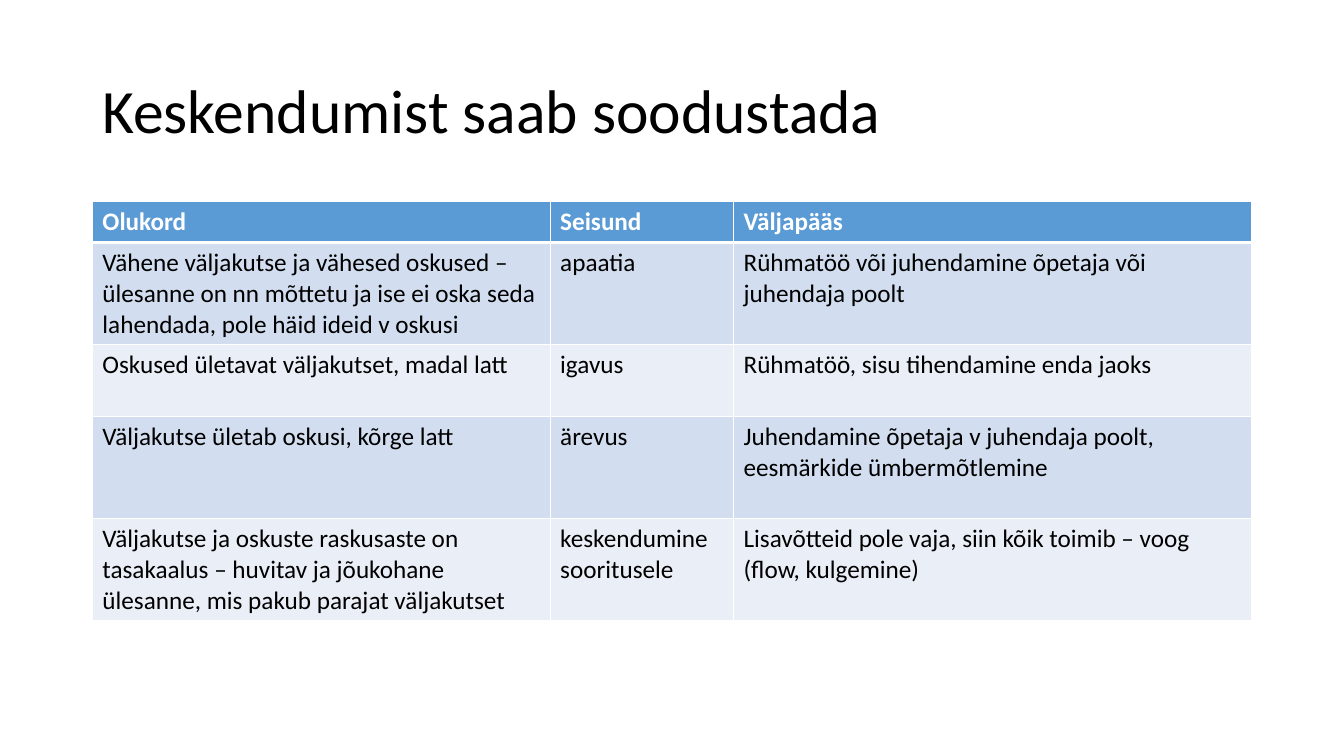
import dataclasses

import pptx
import pptx.dml.color
import pptx.enum.text
import pptx.oxml
import pptx.oxml.ns
import pptx.util

Pt = pptx.util.Pt


@dataclasses.dataclass(frozen=True)
class Theme:
    font: str = "Calibri"
    title_size: float = 44
    table_size: float = 18
    ink: str = "000000"
    paper: str = "FFFFFF"
    header: str = "5B9BD5"
    bands: tuple = ("D2DEEF", "EAEFF7")
    rule: float = 1
    header_rule: float = 3


THEME = Theme()

TITLE = "Keskendumist saab soodustada"
HEADINGS = ("Olukord", "Seisund", "Väljapääs")
SITUATIONS = (
    (
        "Vähene väljakutse ja vähesed oskused – ülesanne on nn mõttetu ja ise ei oska seda "
        "lahendada, pole häid ideid v oskusi",
        "apaatia",
        "Rühmatöö või juhendamine õpetaja või juhendaja poolt",
    ),
    (
        "Oskused ületavat väljakutset, madal latt",
        "igavus",
        "Rühmatöö, sisu tihendamine enda jaoks",
    ),
    (
        "Väljakutse ületab oskusi, kõrge latt",
        "ärevus",
        "Juhendamine õpetaja v juhendaja poolt, eesmärkide ümbermõtlemine",
    ),
    (
        "Väljakutse ja oskuste raskusaste on tasakaalus – huvitav ja jõukohane ülesanne, "
        "mis pakub parajat väljakutset",
        "keskendumine sooritusele",
        "Lisavõtteid pole vaja, siin kõik toimib – voog\n(flow, kulgemine)",
    ),
)
LEFT, WIDTH = 66, 828
COLUMN_WIDTHS = (327, 131, 370)
ROW_HEIGHTS = (29.2, 73, 51.3, 73, 73)


def rgb(code):
    return pptx.dml.color.RGBColor.from_string(code)


def write(frame, text, size, color, bold=False):
    for index, line in enumerate(text.split("\n")):
        paragraph = frame.add_paragraph() if index else frame.paragraphs[0]
        run = paragraph.add_run()
        run.text = line
        run.font.name = THEME.font
        run.font.size = Pt(size)
        run.font.bold = bold
        run.font.color.rgb = rgb(color)


def add_title(slide):
    heading = slide.shapes.add_textbox(Pt(LEFT), Pt(28.75), Pt(WIDTH), Pt(104.4))
    frame = heading.text_frame
    frame.word_wrap = True
    frame.vertical_anchor = pptx.enum.text.MSO_ANCHOR.MIDDLE
    write(frame, TITLE, THEME.title_size, THEME.ink)
    frame.paragraphs[0].line_spacing = 0.9


def set_borders(cell, top, bottom):
    properties = cell._tc.get_or_add_tcPr()
    widths = {"lnL": THEME.rule, "lnR": THEME.rule, "lnT": top, "lnB": bottom}
    for position, (side, width) in enumerate(widths.items()):
        border = pptx.oxml.parse_xml(
            f'<a:{side} {pptx.oxml.ns.nsdecls("a")} w="{Pt(width)}">'
            f'<a:solidFill><a:srgbClr val="{THEME.paper}"/></a:solidFill></a:{side}>'
        )
        properties.insert(position, border)


def fill_row(table, row, texts):
    is_header = row == 0
    background = THEME.header if is_header else THEME.bands[(row - 1) % 2]
    color = THEME.paper if is_header else THEME.ink
    top = THEME.header_rule if row == 1 else THEME.rule
    bottom = THEME.header_rule if is_header else THEME.rule
    for column, text in enumerate(texts):
        cell = table.cell(row, column)
        cell.fill.solid()
        cell.fill.fore_color.rgb = rgb(background)
        set_borders(cell, top, bottom)
        write(cell.text_frame, text, THEME.table_size, color, is_header)


def add_situation_table(slide):
    rows = (HEADINGS, *SITUATIONS)
    table = slide.shapes.add_table(
        len(rows), len(HEADINGS), Pt(LEFT), Pt(144), Pt(WIDTH), Pt(sum(ROW_HEIGHTS))
    ).table
    table.horz_banding = False
    for column, width in zip(table.columns, COLUMN_WIDTHS):
        column.width = Pt(width)
    for row, (texts, height) in enumerate(zip(rows, ROW_HEIGHTS)):
        table.rows[row].height = Pt(height)
        fill_row(table, row, texts)


def main():
    deck = pptx.Presentation()
    deck.slide_width, deck.slide_height = Pt(960), Pt(540)
    slide = deck.slides.add_slide(deck.slide_layouts[6])
    add_title(slide)
    add_situation_table(slide)
    deck.save("out.pptx")


if __name__ == "__main__":
    main()
